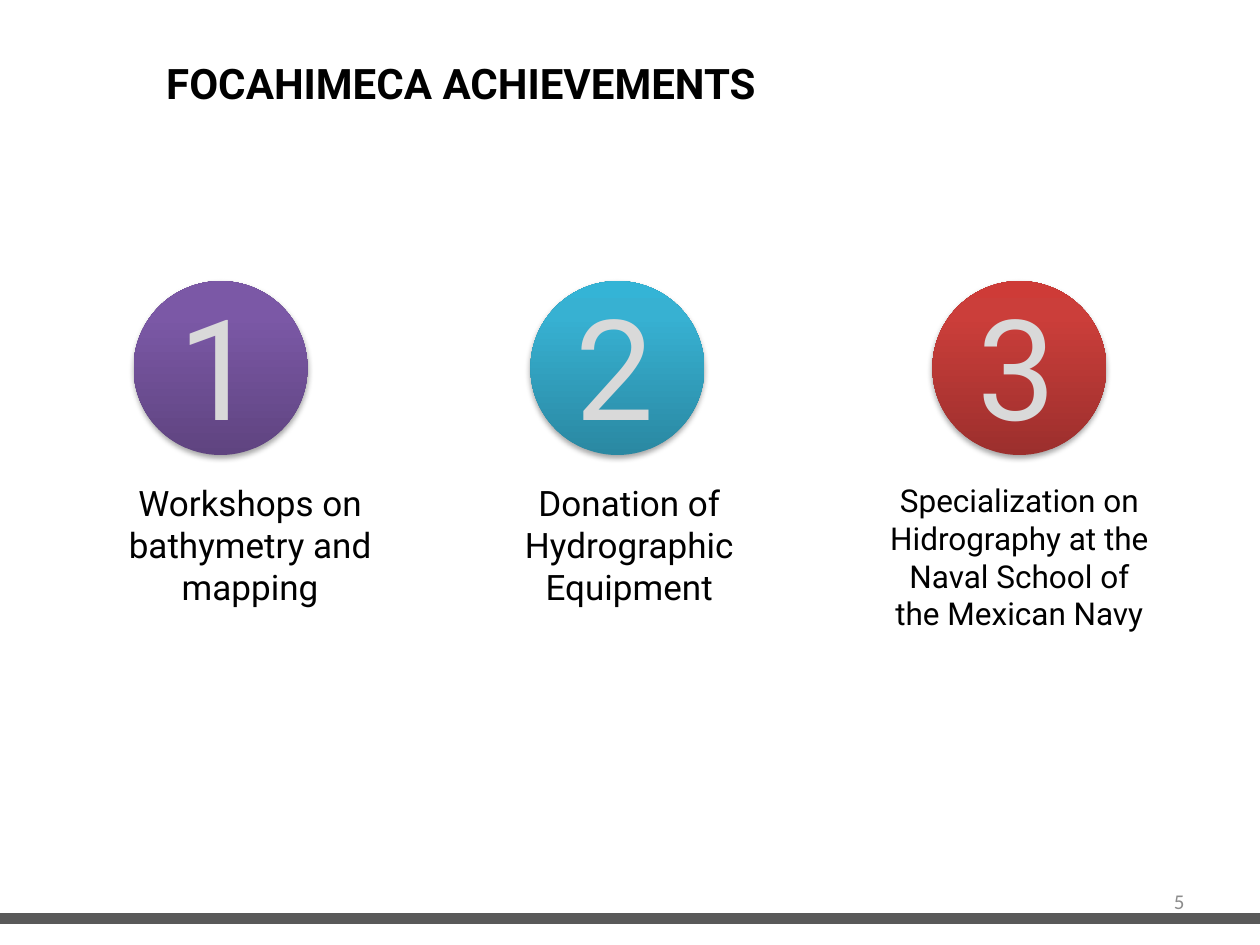
from copy import deepcopy

from lxml import etree
from pptx import Presentation
from pptx.dml.color import RGBColor
from pptx.enum.shapes import MSO_CONNECTOR, MSO_SHAPE
from pptx.enum.text import MSO_ANCHOR, PP_ALIGN
from pptx.oxml import parse_xml
from pptx.oxml.ns import qn
from pptx.util import Pt

LEFT, CENTER, RIGHT = PP_ALIGN.LEFT, PP_ALIGN.CENTER, PP_ALIGN.RIGHT
TOP, MIDDLE = MSO_ANCHOR.TOP, MSO_ANCHOR.MIDDLE
OVAL = MSO_SHAPE.OVAL
STRAIGHT = MSO_CONNECTOR.STRAIGHT

COLORS = {"text": "000000", "number": "D9D9D9", "page": "8C8C8C", "rule": "595959"}
TITLE = "FOCAHIMECA ACHIEVEMENTS"
PAGE_NUMBER = "5"
ACHIEVEMENTS = [
    {"text": "Workshops on bathymetry and mapping", "size": 20,
     "circle_left": 76.3, "text_left": 65.5, "text_width": 154.8,
     "gradient": ("5F4480", "7B58A6", "7C57A8")},
    {"text": "Donation of Hydrographic Equipment", "size": 20,
     "circle_left": 303.1, "text_left": 288.7, "text_width": 141.8,
     "gradient": ("2A88A2", "37B1D2", "34B4D6")},
    {"text": "Specialization on Hidrography at the Naval School of the Mexican Navy",
     "size": 18, "circle_left": 532.8, "text_left": 499, "text_width": 167,
     "gradient": ("9C2F2D", "CB3E3A", "CE3B37")},
]
GRADIENT_POSITIONS = (0, 0.8, 1)
SLIDE_WIDTH, SLIDE_HEIGHT = 720, 540
CIRCLE_TOP, CIRCLE_SIZE = 160.6, 99.4
NUMBER_INSET, NUMBER_TOP = 18.7, 157
TEXT_TOP = 271.4
RULE_TOP = 525
SHADOW = (
    '<a:outerShdw xmlns:a="http://schemas.openxmlformats.org/drawingml/2006/main" '
    'blurRad="40000" dist="23000" dir="5400000" rotWithShape="0">'
    '<a:srgbClr val="000000"><a:alpha val="35000"/></a:srgbClr></a:outerShdw>'
)


def write(box, text, size, color, align=LEFT, font="Roboto", bold=False, anchor=TOP):
    frame = box.text_frame
    frame.word_wrap = True
    frame.vertical_anchor = anchor
    frame.text = text
    para = frame.paragraphs[0]
    para.alignment = align
    para.font.name = font
    para.font.size = Pt(size)
    para.font.bold = bold
    para.font.color.rgb = RGBColor.from_string(COLORS[color])


def add_text(slide, left, top, width, height, *content, **style):
    box = slide.shapes.add_textbox(Pt(left), Pt(top), Pt(width), Pt(height))
    write(box, *content, **style)


def add_circle(slide, left, gradient):
    circle = slide.shapes.add_shape(
        OVAL, Pt(left), Pt(CIRCLE_TOP), Pt(CIRCLE_SIZE), Pt(CIRCLE_SIZE))
    circle.line.fill.background()
    circle.fill.gradient()
    circle.fill.gradient_angle = 90
    properties = circle._element.spPr
    stop_list = properties.find(".//" + qn("a:gsLst"))
    stop_list.append(deepcopy(stop_list[-1]))
    for stop, position, color in zip(
            circle.fill.gradient_stops, GRADIENT_POSITIONS, gradient):
        stop.position = position
        stop.color.rgb = RGBColor.from_string(color)
    circle.shadow.inherit = False
    properties.find(qn("a:effectLst")).append(parse_xml(SHADOW))


def add_rule(slide):
    rule = slide.shapes.add_connector(
        STRAIGHT, Pt(0), Pt(RULE_TOP), Pt(SLIDE_WIDTH), Pt(RULE_TOP))
    rule.line.color.rgb = RGBColor.from_string(COLORS["rule"])
    rule.line.width = Pt(6)
    etree.SubElement(rule._element.spPr, qn("a:effectLst"))


def main():
    deck = Presentation()
    deck.slide_width, deck.slide_height = Pt(SLIDE_WIDTH), Pt(SLIDE_HEIGHT)
    slide = deck.slides.add_slide(deck.slide_layouts[5])

    title = slide.shapes.title
    title.left, title.top, title.width, title.height = Pt(87.8), Pt(29.5), Pt(572.4), Pt(36)
    write(title, TITLE, 24, "text", bold=True)

    for number, item in enumerate(ACHIEVEMENTS, start=1):
        add_circle(slide, item["circle_left"], item["gradient"])
        add_text(slide, item["circle_left"] + NUMBER_INSET, NUMBER_TOP, 67.7, 104.4,
                 str(number), 80, "number")
        add_text(slide, item["text_left"], TEXT_TOP, item["text_width"], 100,
                 item["text"], item["size"], "text", align=CENTER)

    add_text(slide, 516.2, 500.4, 167.8, 28.8, PAGE_NUMBER, 12, "page",
             align=RIGHT, font="Calibri", anchor=MIDDLE)
    add_rule(slide)
    deck.save("out.pptx")


if __name__ == "__main__":
    main()
